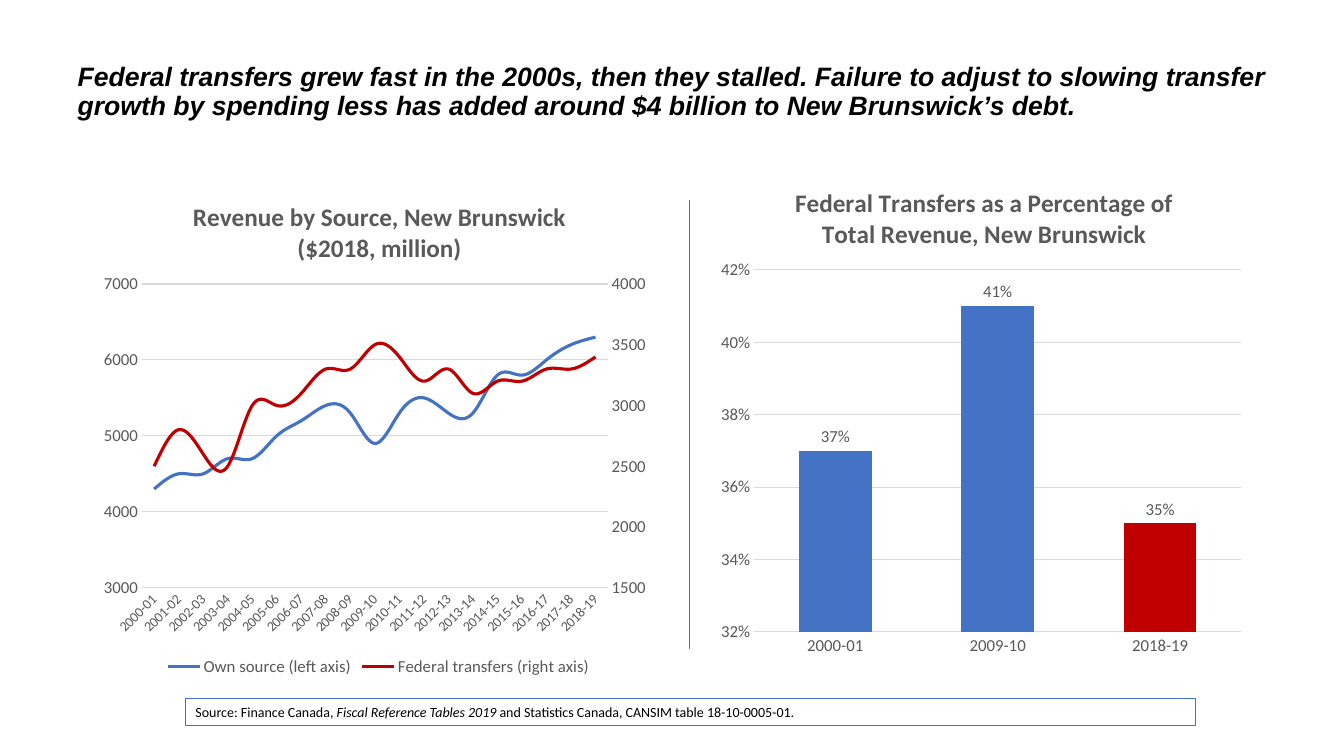
import copy
import dataclasses

import lxml.etree
import pptx
import pptx.chart.axis
import pptx.chart.chart
import pptx.chart.data
import pptx.dml.color
import pptx.dml.fill
import pptx.enum.chart
import pptx.enum.shapes
import pptx.enum.text
import pptx.oxml.ns
import pptx.slide
import pptx.text.text
import pptx.util

Inches = pptx.util.Inches
Pt = pptx.util.Pt
qn = pptx.oxml.ns.qn
COLORS = {"blue": "4472C4", "red": "C00000", "gray": "595959",
          "grid": "D9D9D9", "black": "000000", "white": "FFFFFF"}


@dataclasses.dataclass
class ChartPanel:
    title: str
    kind: pptx.enum.chart.XL_CHART_TYPE
    box: tuple[float, float, float, float]
    plot: tuple[float, float, float, float]
    title_at: tuple[float, float]
    categories: list[str]
    series: dict[str, list[float]]
    scale: tuple[float, float, float]
    number_format: str
    category_size: int


REVENUE = ChartPanel(
    "Revenue by Source, New Brunswick\n($2018, million)",
    pptx.enum.chart.XL_CHART_TYPE.LINE,
    (0.92, 1.76, 5.67, 4.99), (0.086, 0.212, 0.815, 0.604), (0.17, 0.04),
    [f"{year}-{year % 100 + 1:02d}" for year in range(2000, 2019)],
    {"Own source (left axis)": [
        4300, 4500, 4500, 4700, 4700, 5000, 5200, 5400, 5300, 4900,
        5300, 5500, 5300, 5300, 5800, 5800, 6000, 6200, 6300],
     "Federal transfers (right axis)": [
        2500, 2800, 2600, 2500, 3000, 3000, 3100, 3300, 3300, 3500,
        3400, 3200, 3300, 3100, 3200, 3200, 3300, 3300, 3400]},
    (3000, 7000, 1000), "General", 10)
SHARE = ChartPanel(
    "Federal Transfers as a Percentage of\nTotal Revenue, New Brunswick",
    pptx.enum.chart.XL_CHART_TYPE.COLUMN_CLUSTERED,
    (7.05, 1.62, 5.37, 4.99), (0.08, 0.212, 0.9, 0.72), (0.15, 0.04),
    ["2000-01", "2009-10", "2018-19"],
    {"Series 1": [0.37, 0.41, 0.35]},
    (0.32, 0.42, 0.02), "0%", 12)


def rgb(name: str) -> pptx.dml.color.RGBColor:
    return pptx.dml.color.RGBColor.from_string(COLORS[name])


def paint(fill: pptx.dml.fill.FillFormat, color: str) -> None:
    fill.solid()
    fill.fore_color.rgb = rgb(color)


def style_font(font: pptx.text.text.Font, size: float, color: str, name: str = "Calibri",
               bold: bool = False, italic: bool = False) -> None:
    font.size, font.name, font.bold, font.italic = Pt(size), name, bold, italic
    font.color.rgb = rgb(color)


def manual_layout(target: str, **fractions: float) -> lxml.etree.ElementBase:
    """Build a chart layout from fractions of the chart frame."""
    layout = pptx.oxml.parse_xml(
        f'<c:layout xmlns:c="{pptx.oxml.ns.nsdecls("c").split(chr(34))[1]}"><c:manualLayout/></c:layout>')
    settings = {"layoutTarget": target} if target else {}
    settings |= {"xMode": "edge", "yMode": "edge"} | fractions
    for tag, value in settings.items():
        lxml.etree.SubElement(layout[0], qn(f"c:{tag}")).set("val", str(value))
    return layout


def add_panel(page: pptx.slide.Slide, panel: ChartPanel) -> pptx.chart.chart.Chart:
    data = pptx.chart.data.CategoryChartData(number_format=panel.number_format)
    data.categories = panel.categories
    for name, values in panel.series.items():
        data.add_series(name, values)
    chart = page.shapes.add_chart(panel.kind, *map(Inches, panel.box), data).chart
    style_font(chart.font, 10, "black")
    chart.has_legend = False

    # Chart title
    chart.has_title = True
    frame = chart.chart_title.text_frame
    frame.text = panel.title
    for para in frame.paragraphs:
        for span in para.runs:
            style_font(span.font, 18, "gray", bold=True)
    title = chart.chart_title._element
    for old in title.findall(qn("c:layout")):
        title.remove(old)
    title.find(qn("c:tx")).addnext(manual_layout("", **dict(zip("xy", panel.title_at))))

    # Plot position
    area = chart.plots[0]._element.getparent()
    for old in area.findall(qn("c:layout")):
        area.remove(old)
    area.insert(0, manual_layout("inner", **dict(zip("xywh", panel.plot))))

    # Axes
    category, value = chart.category_axis, chart.value_axis
    for axis, size in ((category, panel.category_size), (value, 12)):
        axis.major_tick_mark = axis.minor_tick_mark = pptx.enum.chart.XL_TICK_MARK.NONE
        style_font(axis.tick_labels.font, size, "gray")
    value.minimum_scale, value.maximum_scale, value.major_unit = panel.scale
    value.tick_labels.number_format = panel.number_format
    value.tick_labels.number_format_is_linked = False
    value.has_major_gridlines = True
    for line in (category.format.line, value.major_gridlines.format.line):
        paint(line.fill, "grid")
        line.width = Pt(0.75)
    value.format.line.fill.background()
    return chart


def move_to_right_axis(chart: pptx.chart.chart.Chart) -> None:
    """Plot the last series against a second value axis on the right."""
    first = chart.plots[0]._element
    second = copy.deepcopy(first)
    first.remove(first.findall(qn("c:ser"))[-1])
    for series in second.findall(qn("c:ser"))[:-1]:
        second.remove(series)
    first.addnext(second)
    category = copy.deepcopy(chart.category_axis._element)
    value = copy.deepcopy(chart.value_axis._element)
    for element, own, other in ((category, "5001", "5002"), (value, "5002", "5001")):
        element.find(qn("c:axId")).set("val", own)
        element.find(qn("c:crossAx")).set("val", other)
    for reference, number in zip(second.findall(qn("c:axId")), ("5001", "5002")):
        reference.set("val", number)
    chart.value_axis._element.addnext(value)
    value.addnext(category)
    value.find(qn("c:axPos")).set("val", "r")
    value.find(qn("c:crosses")).set("val", "max")
    pptx.chart.axis.CategoryAxis(category).visible = False
    right = pptx.chart.axis.ValueAxis(value)
    right.has_major_gridlines = False
    right.minimum_scale, right.maximum_scale, right.major_unit = 1500, 4000, 500


deck = pptx.Presentation()
deck.slide_width, deck.slide_height = Inches(13.33), Inches(7.5)
page = deck.slides.add_slide(deck.slide_layouts[5])

# Headline
headline = page.shapes.title
headline.left, headline.top, headline.width, headline.height = map(Inches, (0.67, 0.4, 12.06, 1.04))
headline.text_frame.text = (
    "Federal transfers grew fast in the 2000s, then they stalled. Failure to adjust to slowing "
    "transfer growth by spending less has added around $4 billion to New Brunswick’s debt.")
headline.text_frame.vertical_anchor = pptx.enum.text.MSO_ANCHOR.MIDDLE
para = headline.text_frame.paragraphs[0]
para.alignment, para.line_spacing = pptx.enum.text.PP_ALIGN.LEFT, 0.9
style_font(para.runs[0].font, 19, "black", "Arial", bold=True, italic=True)

# Revenue lines
revenue = add_panel(page, REVENUE)
for series, color in zip(revenue.plots[0].series, ("blue", "red")):
    series.smooth = True
    paint(series.format.line.fill, color)
    series.format.line.width = Pt(2.25)
    series.marker.style = pptx.enum.chart.XL_MARKER_STYLE.NONE
revenue.category_axis._element.find(qn("c:txPr")).find(qn("a:bodyPr")).set("rot", "-2700000")
revenue.has_legend = True
revenue.legend.position = pptx.enum.chart.XL_LEGEND_POSITION.BOTTOM
revenue.legend.include_in_layout = False
style_font(revenue.legend.font, 12, "gray")
move_to_right_axis(revenue)

# Share columns
share = add_panel(page, SHARE)
columns = share.plots[0]
columns.gap_width, columns.overlap, columns.vary_by_categories = 124, -27, False
paint(columns.series[0].format.fill, "blue")
paint(columns.series[0].points[2].format.fill, "red")
columns.has_data_labels = True
labels = columns.data_labels
labels.show_value, labels.number_format, labels.number_format_is_linked = True, "0%", False
labels.position = pptx.enum.chart.XL_LABEL_POSITION.OUTSIDE_END
style_font(labels.font, 12, "gray")

# Source note
note = page.shapes.add_shape(pptx.enum.shapes.MSO_SHAPE.RECTANGLE, *map(Inches, (1.84, 6.93, 10.02, 0.27)))
note.shadow.inherit = False
paint(note.fill, "white")
paint(note.line.fill, "blue")
note.line.width = Pt(1)
note.text_frame.word_wrap = True
para = note.text_frame.paragraphs[0]
para.alignment = pptx.enum.text.PP_ALIGN.LEFT
for text, italic in (("Source: Finance Canada, ", False), ("Fiscal Reference Tables 2019", True),
                     (" and Statistics Canada, CANSIM table 18-10-0005-01.", False)):
    span = para.add_run()
    span.text = text
    style_font(span.font, 10, "black", italic=italic)

# Divider between the charts
divider = page.shapes.add_connector(
    pptx.enum.shapes.MSO_CONNECTOR.STRAIGHT, *map(Inches, (6.84, 1.98, 6.84, 6.44)))
paint(divider.line.fill, "blue")
divider.line.width = Pt(0.5)
lxml.etree.SubElement(divider._element.spPr, qn("a:effectLst"))

deck.save("out.pptx")
